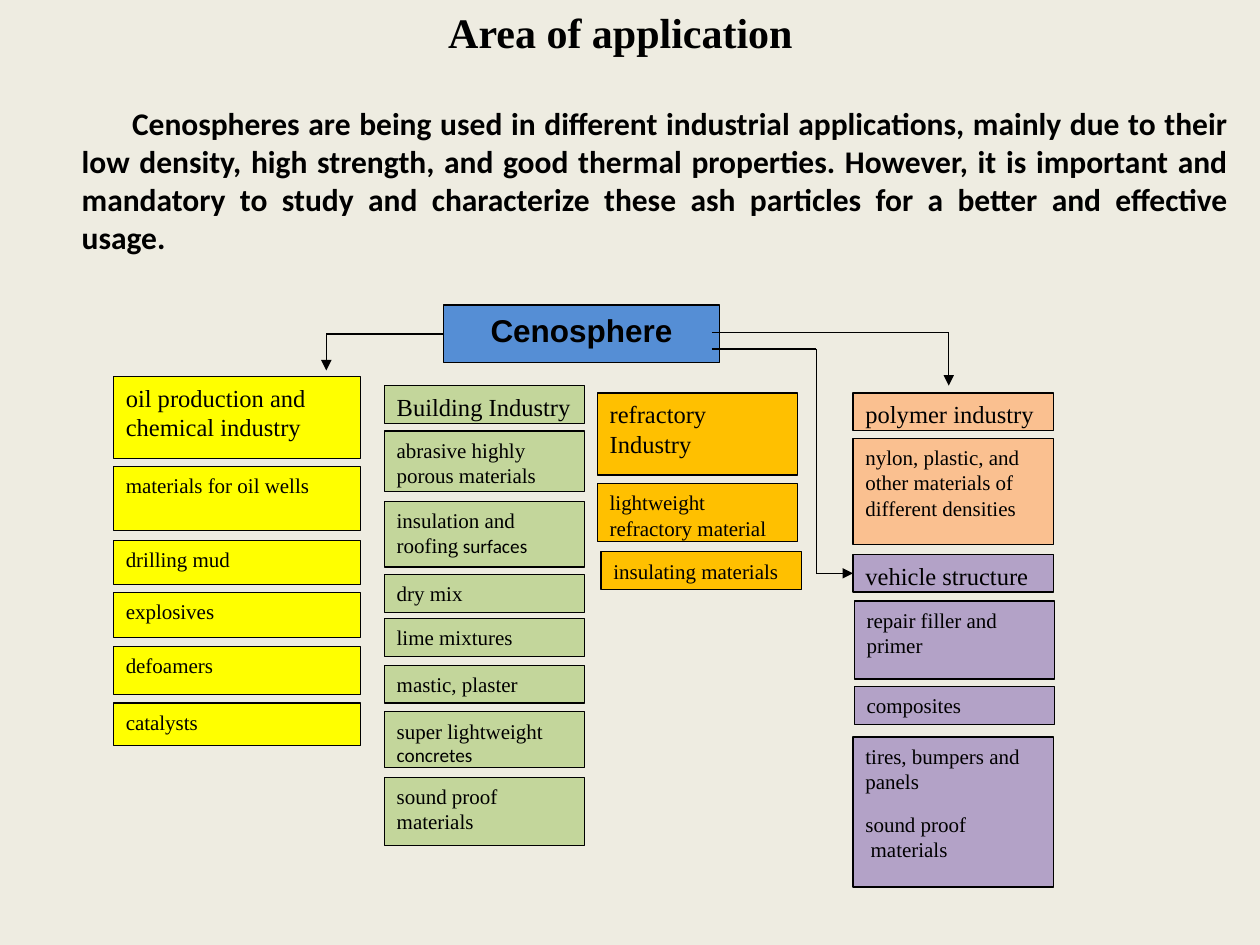
from lxml import etree
from pptx import Presentation
from pptx.dml.color import RGBColor
from pptx.enum.shapes import MSO_CONNECTOR as Connector, MSO_SHAPE as Shape
from pptx.enum.text import MSO_ANCHOR as Anchor, MSO_AUTO_SIZE as AutoSize, PP_ALIGN as Align
from pptx.oxml.ns import qn
from pptx.util import Inches, Pt

BLACK = RGBColor(0x00, 0x00, 0x00)
CREAM = RGBColor(0xEE, 0xEC, 0xE1)
BLUE = RGBColor(0x55, 0x8E, 0xD5)
YELLOW = RGBColor(0xFF, 0xFF, 0x00)
GREEN = RGBColor(0xC3, 0xD6, 0x9B)
ORANGE = RGBColor(0xFF, 0xC0, 0x00)
PEACH = RGBColor(0xFA, 0xC0, 0x90)
PURPLE = RGBColor(0xB3, 0xA2, 0xC7)
SERIF, SANS, BODY = "Times New Roman", "Arial", "Calibri"

INTRO = ("Cenospheres are being used in different industrial applications, mainly due to "
         "their low density, high strength, and good thermal properties. However, it is "
         "important and mandatory to study and characterize these ash particles for a "
         "better and effective usage.")

# Columns: left, width, colour, then boxes from the top down, the heading first.
# A box: top, height, paragraphs (lists of serif text and optional small tail), shift right
COLUMNS = [
    (0.9, 1.96, YELLOW, [
        (2.99, 0.65, [["oil production and chemical industry"]], 0),
        (3.70, 0.51, [["materials for oil wells"]], 0),
        (4.29, 0.35, [["drilling mud"]], 0),
        (4.70, 0.36, [["explosives"]], 0),
        (5.13, 0.38, [["defoamers"]], 0),
        (5.58, 0.34, [["catalysts"]], 0)]),
    (3.05, 1.59, GREEN, [
        (3.06, 0.30, [["Building Industry"]], 0),
        (3.42, 0.48, [["abrasive highly porous materials"]], 0),
        (3.98, 0.52, [["insulation and roofing", " surfaces"]], 0),
        (4.56, 0.30, [["dry mix"]], 0),
        (4.91, 0.30, [["lime mixtures"]], 0),
        (5.28, 0.30, [["mastic, plaster"]], 0),
        (5.65, 0.44, [["super lightweight", " concretes"]], 0),
        (6.17, 0.54, [["sound proof materials"]], 0)]),
    (4.74, 1.59, ORANGE, [
        (3.12, 0.65, [["refractory Industry"]], 0),
        (3.84, 0.46, [["lightweight refractory material"]], 0),
        (4.38, 0.30, [["insulating materials"]], 0.03)]),
    (6.77, 1.59, PEACH, [
        (3.12, 0.30, [["polymer industry"]], 0),
        (3.48, 0.84, [["nylon, plastic, and other materials of different densities"]], 0)]),
    (6.77, 1.59, PURPLE, [
        (4.40, 0.30, [["vehicle structure"]], 0),
        (4.77, 0.62, [["repair filler and primer"]], 0.01),
        (5.45, 0.30, [["composites"]], 0.01),
        (5.85, 1.19, [["tires, bumpers and panels"], ["sound proof"], [" materials"]], 0)]),
]


class Diagram:
    """Holds the line style and the current slide."""

    def __init__(self, slide, line_width=0.75):
        self.slide = slide
        self.line_width = Pt(line_width)
        slide.background.fill.solid()
        slide.background.fill.fore_color.rgb = CREAM

    def add_run(self, paragraph, text, size, font, bold=False):
        run = paragraph.add_run()
        run.text = text
        run.font.size, run.font.name, run.font.bold = Pt(size), font, bold
        run.font.color.rgb = BLACK

    def title(self, text, left, top, width, height):
        heading = self.slide.shapes.title
        heading.left, heading.top = Inches(left), Inches(top)
        heading.width, heading.height = Inches(width), Inches(height)
        heading.text_frame.vertical_anchor = Anchor.TOP
        heading.text_frame.auto_size = AutoSize.SHAPE_TO_FIT_TEXT
        paragraph = heading.text_frame.paragraphs[0]
        paragraph.alignment = Align.CENTER
        self.add_run(paragraph, text, 24, SERIF, True)

    def intro(self, text, left, top, width, height):
        frame = self.slide.shapes.add_textbox(
            Inches(left), Inches(top), Inches(width), Inches(height)).text_frame
        frame.word_wrap = True
        frame.auto_size = AutoSize.SHAPE_TO_FIT_TEXT
        paragraph = frame.paragraphs[0]
        paragraph.alignment = Align.JUSTIFY
        paragraph._p.get_or_add_pPr().set("indent", str(Inches(0.4)))
        self.add_run(paragraph, text, 18, BODY, True)

    def box(self, left, top, width, height, fill, paragraphs, size,
            font=SERIF, bold=False, align=Align.LEFT):
        box = self.slide.shapes.add_shape(
            Shape.RECTANGLE, Inches(left), Inches(top), Inches(width), Inches(height))
        box.shadow.inherit = False
        box.fill.solid()
        box.fill.fore_color.rgb = fill
        box.line.color.rgb, box.line.width = BLACK, self.line_width
        frame = box.text_frame
        frame.word_wrap, frame.vertical_anchor = True, Anchor.TOP
        for i, (text, *tail) in enumerate(paragraphs):
            paragraph = frame.add_paragraph() if i else frame.paragraphs[0]
            paragraph.alignment = align
            # "sound proof" runs straight on into the next paragraph
            paragraph.space_after = Pt(0 if 0 < i < len(paragraphs) - 1 else 10)
            self.add_run(paragraph, text, size, font, bold)
            for small in tail:
                self.add_run(paragraph, small, 11, BODY)
        return box

    def route(self, points, source=None, target=None):
        """Straight segments through the points, with an arrowhead on the last."""
        segments = list(zip(points, points[1:]))
        for i, (start, end) in enumerate(segments):
            line = self.slide.shapes.add_connector(
                Connector.STRAIGHT, *(Inches(v) for v in start + end))
            line.line.color.rgb, line.line.width = BLACK, self.line_width
            etree.SubElement(line._element.spPr, qn("a:effectLst"))
            if i == 0 and source is not None:
                line.begin_connect(source, 1)
            if i == len(segments) - 1:
                etree.SubElement(line.line._get_or_add_ln(), qn("a:tailEnd"), type="triangle")
                if target is not None:
                    line.end_connect(target, 1)


def main():
    prs = Presentation()
    prs.slide_width, prs.slide_height = Inches(10), Inches(7.5)
    diagram = Diagram(prs.slides.add_slide(prs.slide_layouts[5]))

    # Heading and introduction
    diagram.title("Area of application", 1.02, 0, 7.81, 0.51)
    diagram.intro(INTRO, 0.55, 0.78, 9.3, 1.31)

    # Root of the tree
    cenosphere = diagram.box(3.52, 2.42, 2.19, 0.46, BLUE, [["Cenosphere"]], 18,
                             SANS, True, Align.CENTER)

    # Industries, each with its uses below
    headings = []
    for left, width, colour, boxes in COLUMNS:
        for i, (top, height, paragraphs, shift) in enumerate(boxes):
            box = diagram.box(left + shift, top, width, height, colour, paragraphs,
                              12 if i else 14)
            if i == 0:
                headings.append(box)
    vehicle = headings[-1]

    # Arrows to oil, polymer and vehicle industries
    diagram.route([(3.52, 2.65), (2.59, 2.65), (2.59, 2.94)], source=cenosphere)
    diagram.route([(5.65, 2.64), (7.53, 2.64), (7.53, 3.06)])
    diagram.route([(5.65, 2.77), (6.48, 2.77), (6.48, 4.55), (6.77, 4.55)], target=vehicle)

    prs.save("out.pptx")


if __name__ == "__main__":
    main()
